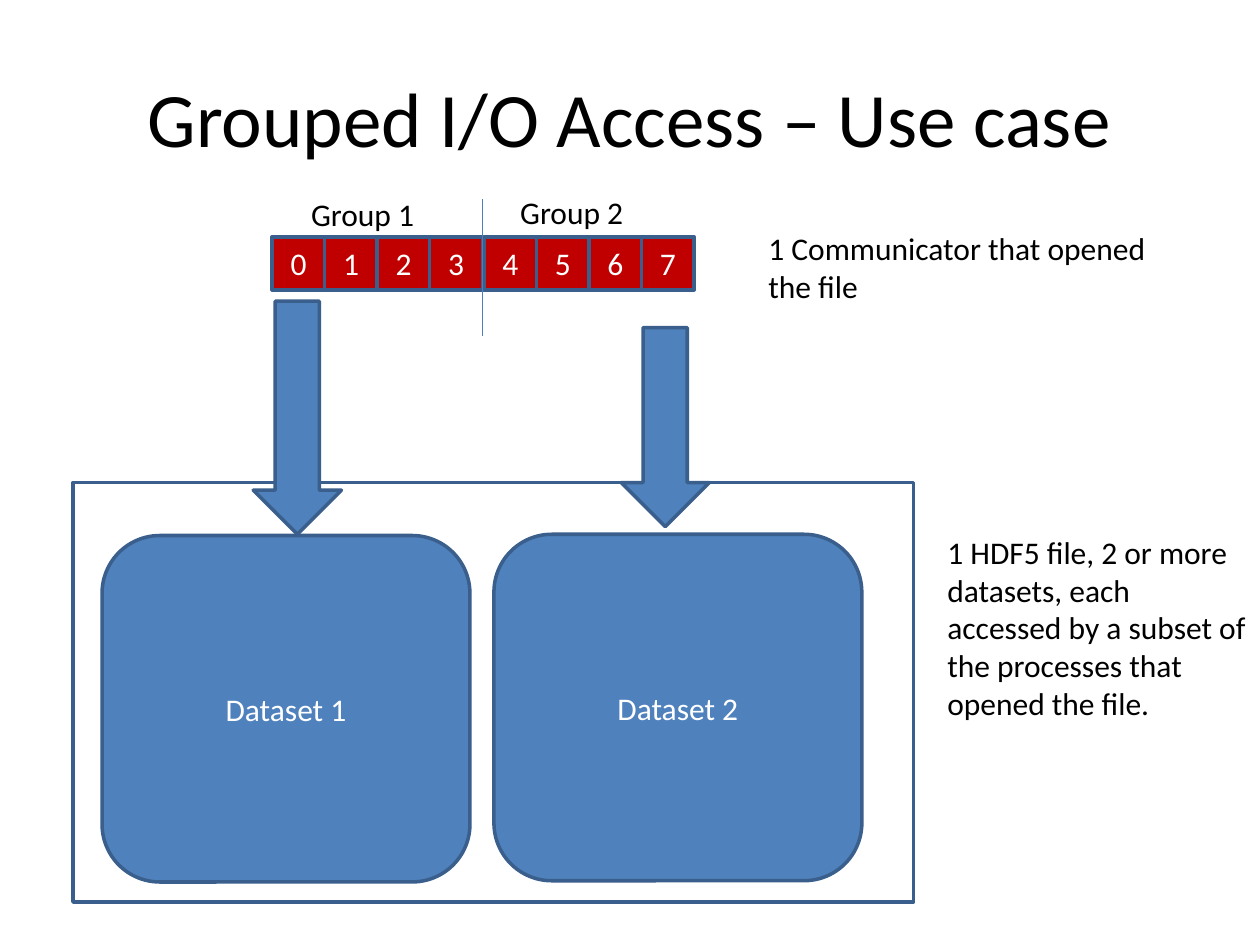
import pptx
import pptx.dml.color
import pptx.enum.shapes
import pptx.enum.text
import pptx.oxml.ns
import pptx.util
from lxml import etree
from pptx.util import Inches

RGBColor = pptx.dml.color.RGBColor
MSO_SHAPE = pptx.enum.shapes.MSO_SHAPE
PP_ALIGN = pptx.enum.text.PP_ALIGN
MSO_ANCHOR = pptx.enum.text.MSO_ANCHOR

BLACK = RGBColor(0x00, 0x00, 0x00)
WHITE = RGBColor(0xFF, 0xFF, 0xFF)
BLUE = RGBColor(0x4F, 0x81, 0xBD)
OUTLINE = RGBColor(0x3A, 0x5F, 0x8C)
DIVIDER = RGBColor(0x4B, 0x7E, 0xBC)
RED = RGBColor(0xC0, 0x00, 0x00)


def write(frame, text, color, size=18, align=PP_ALIGN.LEFT, anchor=MSO_ANCHOR.TOP):
    frame.word_wrap = True
    frame.vertical_anchor = anchor
    frame.text = text
    paragraph = frame.paragraphs[0]
    paragraph.alignment = align
    font = paragraph.runs[0].font
    font.name = "Calibri"
    font.size = pptx.util.Pt(size)
    font.color.rgb = color


def add_outlined(preset, box, fill=None, text=None):
    shape = slide.shapes.add_shape(preset, *map(Inches, box))
    shape.shadow.inherit = False
    shape.line.color.rgb = OUTLINE
    shape.line.width = pptx.util.Pt(2)
    if fill is None:
        shape.fill.background()
    else:
        shape.fill.solid()
        shape.fill.fore_color.rgb = fill
    if text:
        write(shape.text_frame, text, WHITE, align=PP_ALIGN.CENTER, anchor=MSO_ANCHOR.MIDDLE)


prs = pptx.Presentation()
prs.slide_width, prs.slide_height = Inches(10), Inches(7.5)
slide = prs.slides.add_slide(prs.slide_layouts[5])

title = slide.shapes.title
title.left, title.top = Inches(0.5), Inches(0.3)
title.width, title.height = Inches(9), Inches(1.25)
write(title.text_frame, "Grouped I/O Access – Use case", BLACK, 44,
      PP_ALIGN.CENTER, MSO_ANCHOR.MIDDLE)

# The file and its datasets
add_outlined(MSO_SHAPE.RECTANGLE, (0.58, 3.83, 6.67, 3.33))
add_outlined(MSO_SHAPE.ROUNDED_RECTANGLE, (0.81, 4.25, 2.92, 2.75), BLUE, "Dataset 1")
add_outlined(MSO_SHAPE.ROUNDED_RECTANGLE, (3.92, 4.24, 2.92, 2.75), BLUE, "Dataset 2")

# Processes: two groups of four
GROUP_SIZE = 4
CELL = 0.42
PITCH = 1.25 / 3
for group, group_left in enumerate((2.16, 3.84)):
    for member in range(GROUP_SIZE):
        rank = group * GROUP_SIZE + member
        add_outlined(MSO_SHAPE.RECTANGLE, (group_left + member * PITCH, 1.88, CELL, CELL),
                     RED, str(rank))

divider = slide.shapes.add_connector(
    pptx.enum.shapes.MSO_CONNECTOR.STRAIGHT,
    Inches(3.83), Inches(1.58), Inches(3.83), Inches(2.67))
divider.line.color.rgb = DIVIDER
divider.line.width = pptx.util.Pt(0.75)
etree.SubElement(divider._element.spPr, pptx.oxml.ns.qn("a:effectLst"))

# Access from each group to its dataset
for arrow_box in ((2.01, 2.39, 0.7, 1.85), (4.93, 2.6, 0.7, 1.58)):
    add_outlined(MSO_SHAPE.DOWN_ARROW, arrow_box, BLUE)

labels = [
    ("1 HDF5 file, 2 or more datasets, each accessed by a subset of the processes "
     "that opened the file.", (7.42, 4.18, 2.58, 1.62)),
    ("1 Communicator that opened the file", (6, 1.77, 3.42, 0.71)),
    ("Group 1", (2.37, 1.5, 1.25, 0.4)),
    ("Group 2", (4.03, 1.48, 1.25, 0.4)),
]
for text, label_box in labels:
    label = slide.shapes.add_textbox(*map(Inches, label_box))
    write(label.text_frame, text, BLACK)
    label.text_frame.auto_size = pptx.enum.text.MSO_AUTO_SIZE.SHAPE_TO_FIT_TEXT

prs.save("out.pptx")
